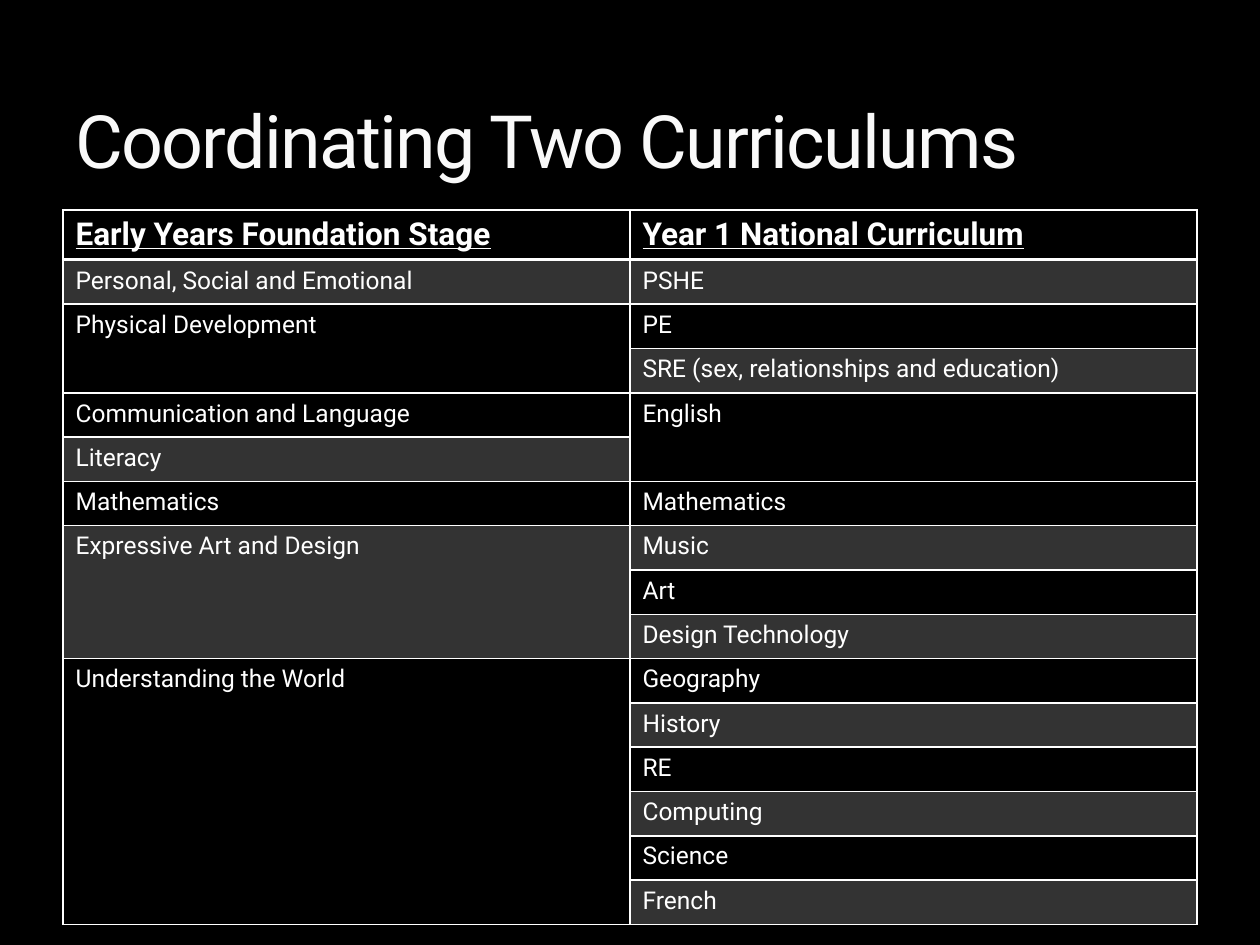
from lxml.etree import SubElement
from pptx import Presentation
from pptx.dml.color import RGBColor
from pptx.enum.text import MSO_ANCHOR
from pptx.oxml.ns import qn
from pptx.util import Emu, Pt

PX = 914400 // 126
WHITE = "FFFFFF"
HEADINGS = ("Early Years Foundation Stage", "Year 1 National Curriculum")
# Each group is a block of rows: the side with fewer subjects spans the block.
GROUPS = [
    (["Personal, Social and Emotional"], ["PSHE"]),
    (["Physical Development"], ["PE", "SRE (sex, relationships and education)"]),
    (["Communication and Language", "Literacy"], ["English"]),
    (["Mathematics"], ["Mathematics"]),
    (["Expressive Art and Design"], ["Music", "Art", "Design Technology"]),
    (["Understanding the World"],
     ["Geography", "History", "RE", "Computing", "Science", "French"]),
]


def px(length):
    return Emu(length * PX)


def color(value):
    return RGBColor.from_string(value)


def write_text(frame, text, size, font_color=WHITE, bold=False, underline=False, spacing=0):
    """Write one run; spacing is in hundredths of a point."""
    run = frame.paragraphs[0].add_run()
    run.text = text
    font = run.font
    font.name, font.size = "Roboto", Pt(size)
    font.bold, font.underline = bold, underline
    font.color.rgb = color(font_color)
    if spacing:
        font._element.set("spc", str(spacing))


def add_title(slide, left, top, width, height):
    frame = slide.shapes.add_textbox(px(left), px(top), px(width), px(height)).text_frame
    frame.word_wrap = True
    frame.vertical_anchor = MSO_ANCHOR.BOTTOM
    write_text(frame, "Coordinating Two Curriculums", 42, "F9F9F9", spacing=-100)


def set_borders(cell, top=1, bottom=1):
    """Draw white cell borders; widths are in points."""
    properties = cell._tc.get_or_add_tcPr()
    for side, width in (("L", 1), ("R", 1), ("T", top), ("B", bottom)):
        line = SubElement(properties, qn(f"a:ln{side}"), w=str(Pt(width)))
        fill = SubElement(line, qn("a:solidFill"))
        SubElement(fill, qn("a:srgbClr"), val=WHITE)


def set_band(cell, shaded):
    """Fill with 20 % white, or leave the cell clear."""
    if not shaded:
        cell.fill.background()
        return
    cell.fill.solid()
    cell.fill.fore_color.rgb = color(WHITE)
    color_element = cell._tc.tcPr.find(f"{qn('a:solidFill')}/{qn('a:srgbClr')}")
    SubElement(color_element, qn("a:alpha"), val="20000")


def add_curriculum_table(slide, left, top, width, height, header_height):
    row_count = sum(max(map(len, group)) for group in GROUPS)
    table = slide.shapes.add_table(
        row_count + 1, 2, px(left), px(top), px(width), px(height)).table
    table.horz_banding = False
    for column in table.columns:
        column.width = px(width) // 2
    for index, row in enumerate(table.rows):
        row.height = px(height - header_height) // row_count if index else px(header_height)
        for cell in row.cells:
            set_borders(cell, top=2 if index == 1 else 1, bottom=1 if index else 2)
            set_band(cell, index % 2 == 1)

    for column, heading in enumerate(HEADINGS):
        write_text(table.cell(0, column).text_frame, heading, 18, bold=True, underline=True)
    first_row = 1
    for group in GROUPS:
        row_span = max(map(len, group))
        for column, subjects in enumerate(group):
            for offset, subject in enumerate(subjects):
                write_text(table.cell(first_row + offset, column).text_frame, subject, 14)
            if len(subjects) < row_span:
                last_cell = table.cell(first_row + row_span - 1, column)
                table.cell(first_row, column).merge(last_cell)
        first_row += row_span


def main():
    presentation = Presentation()
    presentation.slide_width, presentation.slide_height = px(1260), px(945)
    slide = presentation.slides.add_slide(presentation.slide_layouts[6])
    slide.background.fill.solid()
    slide.background.fill.fore_color.rgb = color("000000")
    add_curriculum_table(slide, 63, 210, 1134, 715, header_height=50)
    add_title(slide, 63, 21, 1134, 168)
    presentation.save("out.pptx")


if __name__ == "__main__":
    main()
